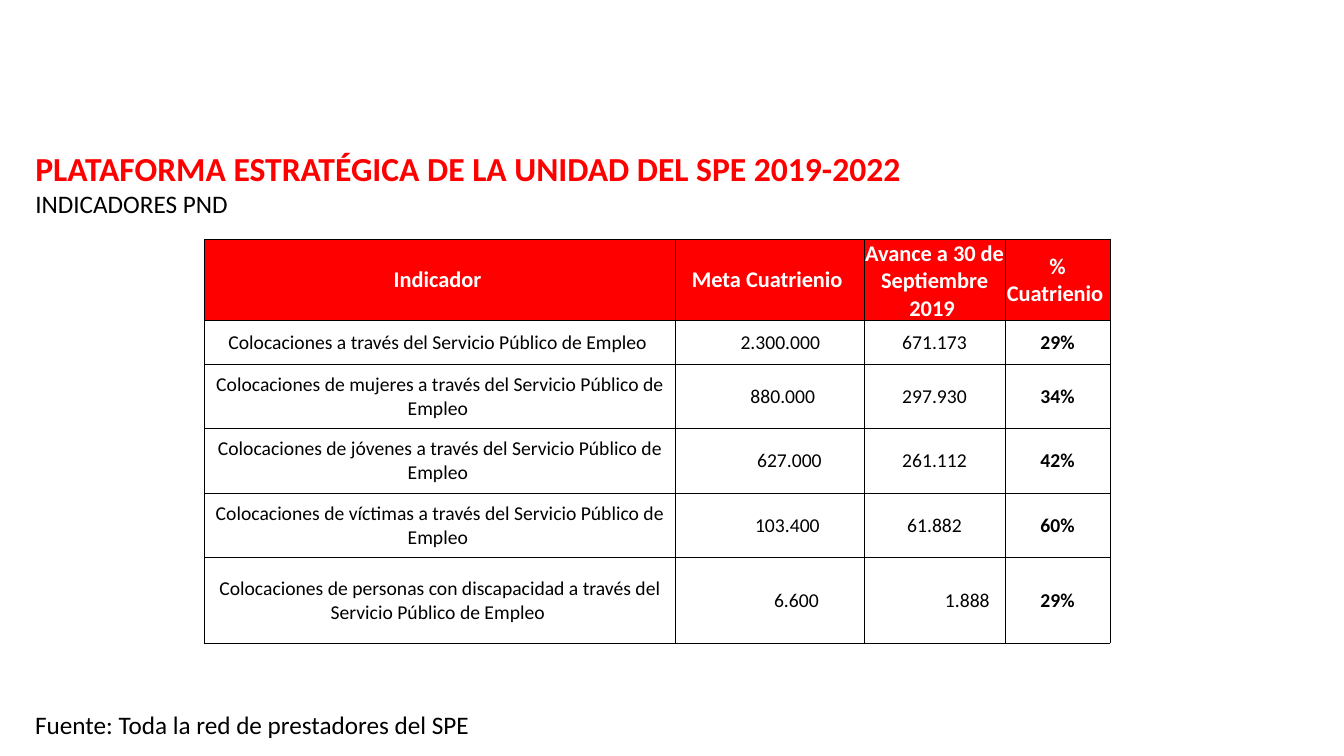
from dataclasses import dataclass
from typing import Any

from lxml.etree import SubElement
from pptx import Presentation
from pptx.dml.color import RGBColor
from pptx.enum.text import MSO_ANCHOR as Anchor, MSO_AUTO_SIZE as AutoSize, PP_ALIGN as Align
from pptx.oxml.ns import qn
from pptx.util import Inches, Pt

# Grid of tenths of an inch
COLUMNS, ROWS = 133.3, 75
RED, BLACK, WHITE = "FF0000", "000000", "FFFFFF"


@dataclass(frozen=True)
class Line:
    text: str
    size: int
    color: str = BLACK
    bold: bool = False


@dataclass(frozen=True)
class Area:
    left: float
    top: float
    width: float
    height: float


@dataclass(frozen=True)
class Indicator:
    name: str
    target: str
    progress: str
    share: str
    height: float
    target_indent: float
    progress_indent: float = 0


HEADINGS = ["Indicador ", "Meta Cuatrienio ", "Avance a 30 de Septiembre 2019 ", "% Cuatrienio "]
COLUMN_WIDTHS = [46.7, 18.7, 14, 10.4]
HEADER_HEIGHT = 5.5
INDICATORS = [
    Indicator("Colocaciones a través del Servicio Público de Empleo ",
              "2.300.000", "671.173", "29%", 4.3, 2.1),
    Indicator("Colocaciones de mujeres a través del Servicio Público de Empleo ",
              "880.000", "297.930", "34%", 6.4, 2.6),
    Indicator("Colocaciones de jóvenes a través del Servicio Público de Empleo ",
              "627.000", "261.112", "42%", 6.4, 3.9),
    Indicator("Colocaciones de víctimas a través del Servicio Público de Empleo ",
              "103.400", "61.882", "60%", 6.4, 3.5),
    Indicator("Colocaciones de personas con discapacidad a través del Servicio Público de Empleo ",
              "6.600", "1.888", "29%", 8.5, 5.3, 6.5),
]


def grid(count: float) -> int:
    return Inches(count / 10)


def paint(value: str) -> RGBColor:
    return RGBColor.from_string(value)


def apply(target: Any, values: dict[str, Any]) -> None:
    for name, value in values.items():
        setattr(target, name, value)


def write(para: Any, line: Line, align: Align) -> None:
    apply(para, {"alignment": align, "space_before": Pt(0)})
    span = para.add_run()
    span.text = line.text
    apply(span.font, {"name": "Calibri", "size": Pt(line.size), "bold": line.bold})
    span.font.color.rgb = paint(line.color)


def fill_box(box: Any, area: Area, lines: list[Line]) -> None:
    apply(box, {"left": grid(area.left), "top": grid(area.top),
                "width": grid(area.width), "height": grid(area.height)})
    frame = box.text_frame
    apply(frame, {"word_wrap": False, "auto_size": AutoSize.SHAPE_TO_FIT_TEXT,
                  "vertical_anchor": Anchor.TOP})
    for index, line in enumerate(lines):
        para = frame.add_paragraph() if index else frame.paragraphs[0]
        write(para, line, Align.LEFT)


def add_borders(cell: Any) -> None:
    properties = cell._tc.get_or_add_tcPr()
    for side in ("lnL", "lnR", "lnT", "lnB"):
        border = SubElement(properties, qn(f"a:{side}"), w=str(Pt(0.5)))
        solid = SubElement(border, qn("a:solidFill"))
        SubElement(solid, qn("a:srgbClr"), val=BLACK)


def fill_cell(cell: Any, line: Line, fill: str | None = None, indent: float = 0) -> None:
    apply(cell, {"vertical_anchor": Anchor.MIDDLE, "margin_left": grid(0.1 + indent),
                 "margin_right": grid(0.1), "margin_top": grid(0.1), "margin_bottom": 0})
    add_borders(cell)
    if fill:
        cell.fill.solid()
        cell.fill.fore_color.rgb = paint(fill)
    else:
        cell.fill.background()
    write(cell.text_frame.paragraphs[0], line, Align.CENTER)


def add_indicator_table(page: Any, area: Area) -> None:
    table = page.shapes.add_table(len(INDICATORS) + 1, len(HEADINGS), grid(area.left),
                                  grid(area.top), grid(area.width), grid(area.height)).table
    apply(table, {"first_row": False, "horz_banding": False})
    for column, width in zip(table.columns, COLUMN_WIDTHS):
        column.width = grid(width)
    heights = [HEADER_HEIGHT] + [item.height for item in INDICATORS]
    for row, height in zip(table.rows, heights):
        row.height = grid(height)

    # Header row
    for cell, heading in zip(table.rows[0].cells, HEADINGS):
        fill_cell(cell, Line(heading, 16, WHITE, True), RED)

    # One row for each indicator
    for index, item in enumerate(INDICATORS, start=1):
        texts = [item.name, item.target, item.progress, item.share]
        indents = [0, item.target_indent, item.progress_indent, 0]
        for column, (text, indent) in enumerate(zip(texts, indents)):
            bold = column == len(texts) - 1
            fill_cell(table.cell(index, column), Line(text, 14, bold=bold), indent=indent)


def main() -> None:
    deck = Presentation()
    apply(deck, {"slide_width": grid(COLUMNS), "slide_height": grid(ROWS)})
    page = deck.slides.add_slide(deck.slide_layouts[5])

    # Title and subtitle
    fill_box(page.shapes.title, Area(2.5, 14.2, 92.7, 8.1), [
        Line("PLATAFORMA ESTRATÉGICA DE LA UNIDAD DEL SPE 2019-2022", 24, RED, True),
        Line("INDICADORES PND", 18),
    ])

    add_indicator_table(page, Area(20.3, 23.7, sum(COLUMN_WIDTHS), 40.2))

    # Source note
    note = page.shapes.add_textbox(0, 0, 0, 0)
    fill_box(note, Area(2.5, 69.9, 45.9, 4),
             [Line("Fuente: Toda la red de prestadores del SPE", 18)])

    deck.save("out.pptx")


if __name__ == "__main__":
    main()
